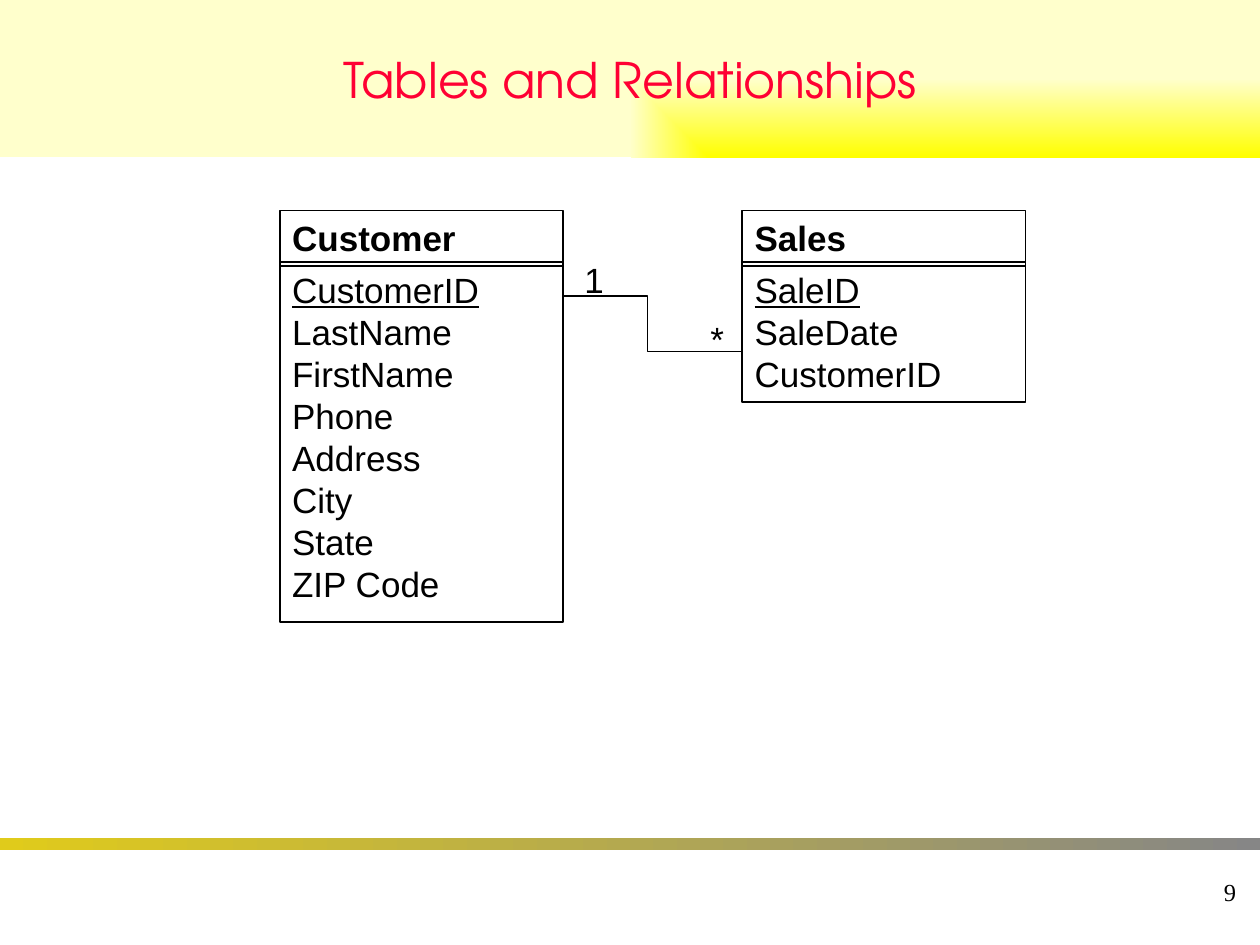
from lxml import etree
from pptx import Presentation
from pptx.dml.color import RGBColor
from pptx.enum.shapes import MSO_SHAPE
from pptx.enum.text import MSO_ANCHOR as Anchor, PP_ALIGN as Align
from pptx.oxml.ns import qn
from pptx.util import Inches, Pt

BLACK = RGBColor(0x00, 0x00, 0x00)
RED = RGBColor(0xFF, 0x00, 0x33)
YELLOW = RGBColor(0xFF, 0xFF, 0x00)
CREAM = RGBColor(0xFF, 0xFF, 0xCC)
GOLD = RGBColor(0xE0, 0xCB, 0x1B)
GRAY = RGBColor(0x86, 0x86, 0x86)

ENTITY_TOP, ENTITY_WIDTH = 1.67, 2.25
HEADER_HEIGHT, FIELDS_TOP = 0.44, 2.08
CUSTOMER_LEFT, SALES_LEFT = 2.22, 5.89
CUSTOMER_FIELDS = ["CustomerID", "LastName", "FirstName", "Phone",
                   "Address", "City", "State", "ZIP Code"]
SALES_FIELDS = ["SaleID", "SaleDate", "CustomerID"]


def write_lines(shape, lines, size=20, font="Arial", color=BLACK,
                align=Align.LEFT, anchor=Anchor.TOP, bold=False):
    frame = shape.text_frame
    frame.word_wrap = True
    frame.vertical_anchor = anchor
    frame.text = "\n".join(lines)
    for paragraph in frame.paragraphs:
        paragraph.alignment = align
        paragraph.font.name = font
        paragraph.font.size = Pt(size)
        paragraph.font.color.rgb = color
        paragraph.font.bold = bold


def add_rectangle(slide, left, top, width, height):
    shape = slide.shapes.add_shape(MSO_SHAPE.RECTANGLE, Inches(left), Inches(top),
                                   Inches(width), Inches(height))
    shape.shadow.inherit = False
    return shape


def add_gradient_band(slide, top, height, start, end):
    """Add a full-width band that runs from start on the left to end on the right."""
    band = add_rectangle(slide, 0, top, 10, height)
    band.line.fill.background()
    band.fill.gradient()
    band.fill.gradient_angle = 0
    for stop, color, position in zip(band.fill.gradient_stops, (start, end), (0, 1)):
        stop.color.rgb = color
        stop.position = position
    return band


def spread_from_corner(shape):
    """Make the gradient of the shape start at its bottom right corner."""
    gradient = shape._element.spPr.find(qn("a:gradFill"))
    linear = gradient.find(qn("a:lin"))
    corner = etree.Element(qn("a:path"), {"path": "rect"})
    etree.SubElement(corner, qn("a:fillToRect"), {"l": "100000", "t": "100000"})
    gradient.replace(linear, corner)


def outline(shape):
    shape.fill.background()
    shape.line.color.rgb = BLACK
    shape.line.width = Pt(1)


def add_entity(slide, left, name, fields, fields_height):
    """Add a named box above a box of fields, with the key field underlined."""
    header = add_rectangle(slide, left, ENTITY_TOP, ENTITY_WIDTH, HEADER_HEIGHT)
    body = add_rectangle(slide, left, FIELDS_TOP, ENTITY_WIDTH, fields_height)
    outline(header)
    outline(body)
    write_lines(header, [name], bold=True)
    write_lines(body, fields)
    body.text_frame.paragraphs[0].runs[0].font.underline = True


def add_relationship(slide, points):
    start, *rest = [(Inches(x), Inches(y)) for x, y in points]
    builder = slide.shapes.build_freeform(*start)
    builder.add_line_segments(rest, close=False)
    shape = builder.convert_to_shape()
    shape.shadow.inherit = False
    outline(shape)


def add_label(slide, text, left, top, width, height, **style):
    box = slide.shapes.add_textbox(Inches(left), Inches(top),
                                   Inches(width), Inches(height))
    write_lines(box, [text], **style)


def main():
    presentation = Presentation()
    presentation.slide_width = Inches(10)
    presentation.slide_height = Inches(7.5)
    slide = presentation.slides.add_slide(presentation.slide_layouts[6])

    add_gradient_band(slide, 6.65, 0.1, GOLD, GRAY)
    title = add_gradient_band(slide, 0, 1.25, YELLOW, CREAM)
    spread_from_corner(title)
    write_lines(title, ["Tables and Relationships"], 28, "TeX Gyre Adventor", RED,
                Align.CENTER, Anchor.MIDDLE)
    add_label(slide, "9", 7.83, 6.83, 2.08, 0.5, size=14, font="Times New Roman",
              align=Align.RIGHT, anchor=Anchor.MIDDLE)

    add_entity(slide, CUSTOMER_LEFT, "Customer", CUSTOMER_FIELDS, 2.86)
    add_entity(slide, SALES_LEFT, "Sales", SALES_FIELDS, 1.11)

    add_relationship(slide, [(CUSTOMER_LEFT + ENTITY_WIDTH, 2.35), (5.14, 2.35),
                             (5.14, 2.79), (SALES_LEFT, 2.79)])
    add_label(slide, "1", 4.54, 2, 0.36, 0.44)
    add_label(slide, "*", 5.54, 2.47, 0.31, 0.44)

    presentation.save("out.pptx")


if __name__ == "__main__":
    main()
